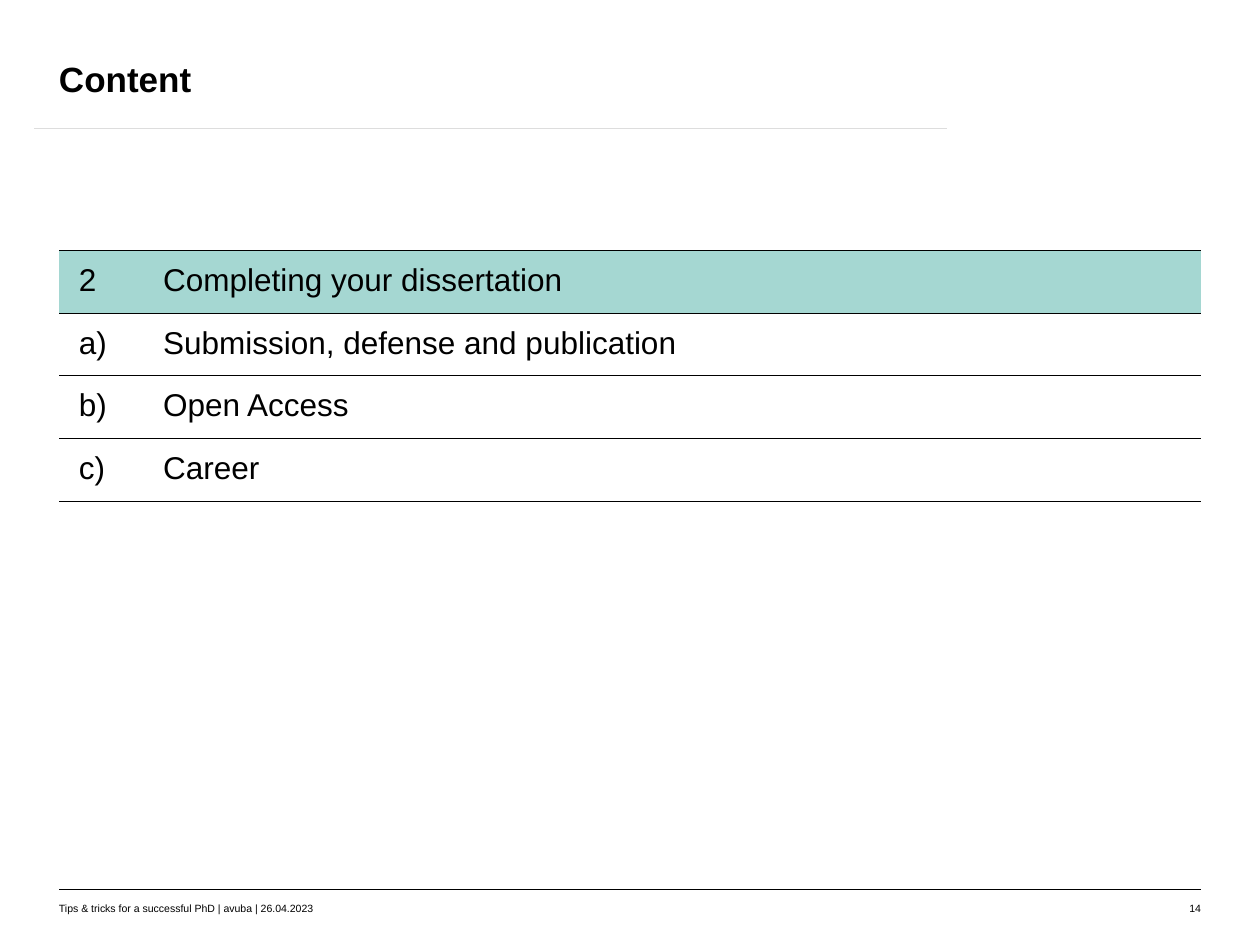
from dataclasses import dataclass

from lxml import etree
from pptx import Presentation
from pptx.dml.color import RGBColor
from pptx.enum.shapes import MSO_CONNECTOR
from pptx.enum.text import PP_ALIGN
from pptx.oxml import parse_xml
from pptx.oxml.ns import nsdecls, qn
from pptx.util import Cm, Pt

TITLE = "Content"
AGENDA = [
    ("2", "Completing your dissertation"),
    ("a)", "Submission, defense and publication"),
    ("b)", "Open Access"),
    ("c)", "Career"),
]
CURRENT_ROW = 0
FOOTER = "Tips & tricks for a successful PhD | avuba | 26.04.2023"
PAGE = "14"


@dataclass(frozen=True)
class Theme:
    font: str = "Arial"
    ink: str = "000000"
    rule: str = "DDDDDD"
    highlight: str = "A5D7D2"
    title_size: int = 20
    body_size: int = 18
    footer_size: int = 6


THEME = Theme()
WIDTH, HEIGHT = 25.4, 19.05
MARGIN = 1.19
CONTENT_W = WIDTH - 2 * MARGIN
NUMBER_W = 1.7
TABLE_TOP, ROW_H = 5.05, 1.21
FOOTER_TOP, FOOTER_H = 18.13, 0.5
PAGE_W = 0.4


def add_run(p, text, size, bold=False):
    r = p.add_run()
    r.text = text
    r.font.name = THEME.font
    r.font.size = Pt(size)
    r.font.bold = bold
    r.font.color.rgb = RGBColor.from_string(THEME.ink)


def add_text(s, box, text, size, bold=False, align=PP_ALIGN.LEFT, inset_top=0):
    tf = s.shapes.add_textbox(*map(Cm, box)).text_frame
    tf.word_wrap = True
    tf.margin_left = tf.margin_right = tf.margin_bottom = 0
    tf.margin_top = Cm(inset_top)
    p = tf.paragraphs[0]
    p.alignment = align
    add_run(p, text, size, bold)
    return p


def add_rule(s, left, right, y, color, weight):
    line = s.shapes.add_connector(
        MSO_CONNECTOR.STRAIGHT, Cm(left), Cm(y), Cm(right), Cm(y))
    line.line.color.rgb = RGBColor.from_string(color)
    line.line.width = Pt(weight)
    etree.SubElement(line._element.spPr, qn("a:effectLst"))


def set_borders(cell):
    """Rule the cell above and below and leave its sides open."""
    ruled = f'<a:solidFill><a:srgbClr val="{THEME.ink}"/></a:solidFill>'
    sides = {"lnL": "<a:noFill/>", "lnR": "<a:noFill/>", "lnT": ruled, "lnB": ruled}
    tc_pr = cell._tc.get_or_add_tcPr()
    for i, (tag, paint) in enumerate(sides.items()):
        xml = f'<a:{tag} {nsdecls("a")} w="{Pt(0.5)}">{paint}</a:{tag}>'
        tc_pr.insert(i, parse_xml(xml))


def add_agenda(s):
    table = s.shapes.add_table(
        len(AGENDA), 2, Cm(MARGIN), Cm(TABLE_TOP),
        Cm(CONTENT_W), Cm(ROW_H * len(AGENDA))).table
    table.first_row = table.horz_banding = False
    for column, width in zip(table.columns, (NUMBER_W, CONTENT_W - NUMBER_W)):
        column.width = Cm(width)
    for i, entry in enumerate(AGENDA):
        table.rows[i].height = Cm(ROW_H)
        for cell, text in zip(table.rows[i].cells, entry):
            cell.margin_left = cell.margin_right = Cm(0.4)
            cell.margin_top = cell.margin_bottom = Cm(0.25)
            if i == CURRENT_ROW:
                cell.fill.solid()
                cell.fill.fore_color.rgb = RGBColor.from_string(THEME.highlight)
            else:
                cell.fill.background()
            set_borders(cell)
            add_run(cell.text_frame.paragraphs[0], text, THEME.body_size)


def main():
    prs = Presentation()
    prs.slide_width, prs.slide_height = Cm(WIDTH), Cm(HEIGHT)
    s = prs.slides.add_slide(prs.slide_layouts[6])

    add_rule(s, MARGIN, WIDTH - MARGIN, 17.93, THEME.ink, 0.25)
    add_rule(s, 0.69, 19.1, 2.59, THEME.rule, 1)
    title = add_text(s, (MARGIN, 1.12, CONTENT_W, 2.1), TITLE,
                     THEME.title_size, bold=True)
    title.line_spacing = Pt(25)
    add_agenda(s)
    add_text(s, (MARGIN, FOOTER_TOP, 6, FOOTER_H), FOOTER,
             THEME.footer_size, inset_top=0.05)
    add_text(s, (WIDTH - MARGIN - PAGE_W, FOOTER_TOP, PAGE_W, FOOTER_H), PAGE,
             THEME.footer_size, align=PP_ALIGN.RIGHT, inset_top=0.05)
    prs.save("out.pptx")


if __name__ == "__main__":
    main()
